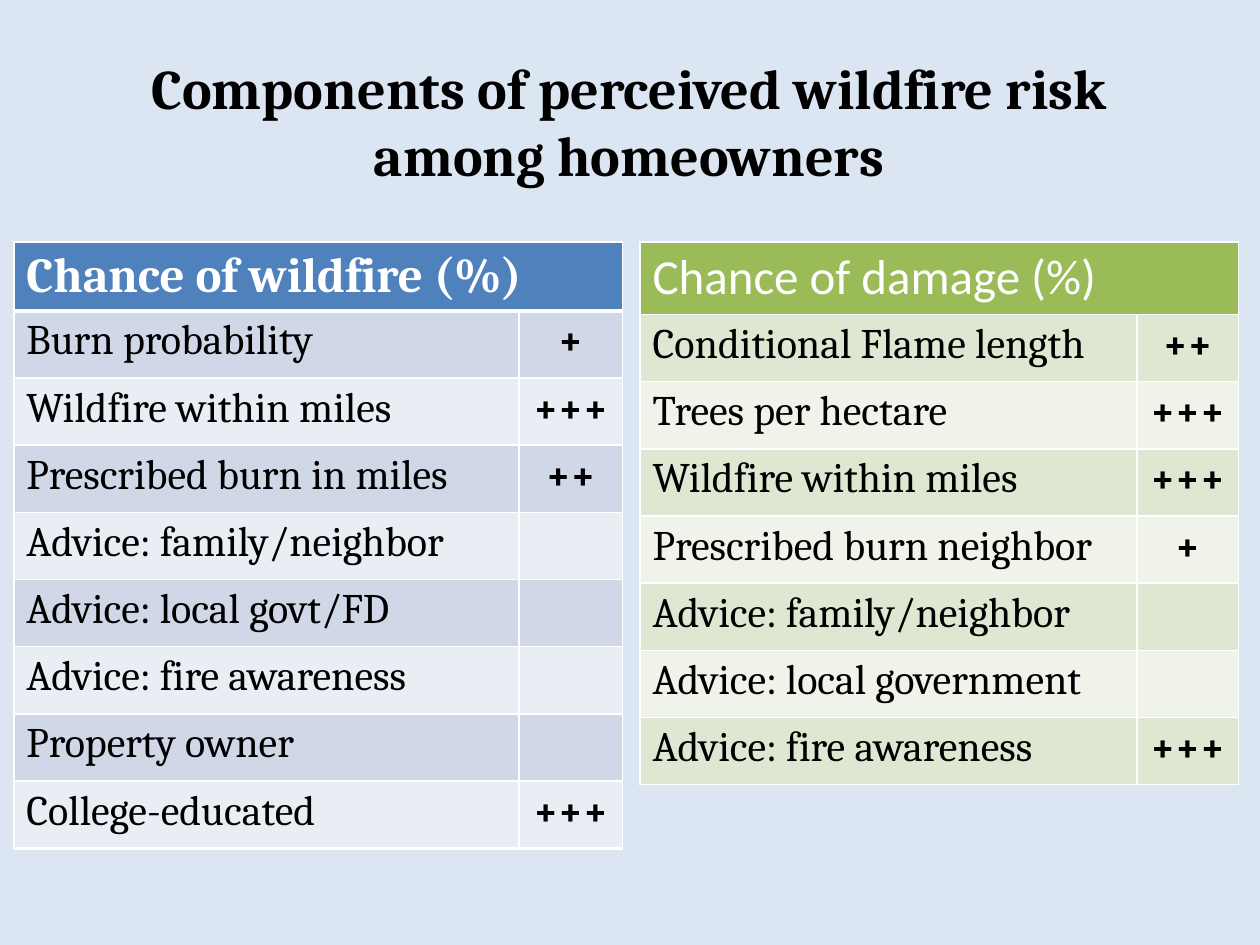
"""Build a slide with two tables on perceived wildfire risk."""
from lxml.etree import SubElement
from pptx import Presentation
from pptx.dml.color import RGBColor
from pptx.enum.text import MSO_ANCHOR as Anchor, PP_ALIGN as Align
from pptx.oxml.ns import qn
from pptx.util import Inches, Pt

BACKGROUND = RGBColor(0xDC, 0xE6, 0xF2)
BLACK = RGBColor(0, 0, 0)
WHITE = RGBColor(0xFF, 0xFF, 0xFF)
BLUE = RGBColor(0x4F, 0x81, 0xBD)
BLUE_BANDS = RGBColor(0xD0, 0xD8, 0xE8), RGBColor(0xE9, 0xED, 0xF4)
GREEN = RGBColor(0x9B, 0xBB, 0x59)
GREEN_BANDS = RGBColor(0xDE, 0xE7, 0xD1), RGBColor(0xEF, 0xF3, 0xEA)

SLIDE_WIDTH, SLIDE_HEIGHT = Inches(10), Inches(7.5)
TABLE_TOP = Inches(1.92)
ROW_HEIGHT = Inches(1.6) // 3
LABEL_SHARE = 0.83

TABLES = [
    dict(left=5.08, width=4.75, title="Chance of damage (%)", font="Calibri", bold=False,
         color=GREEN, bands=GREEN_BANDS, header_rule=1, end_rule=1,
         rows=[("Conditional Flame length", "++"), ("Trees per hectare", "+++"),
               ("Wildfire within miles", "+++"), ("Prescribed burn neighbor", "+"),
               ("Advice: family/neighbor", ""), ("Advice: local government", ""),
               ("Advice: fire awareness", "+++")]),
    dict(left=0.11, width=4.83, title="Chance of wildfire (%)", font="Cambria", bold=True,
         color=BLUE, bands=BLUE_BANDS, header_rule=3, end_rule=2.25,
         rows=[("Burn probability", "+"), ("Wildfire within miles", "+++"),
               ("Prescribed burn in miles", "++"), ("Advice: family/neighbor", ""),
               ("Advice: local govt/FD", ""), ("Advice: fire awareness", ""),
               ("Property owner", ""), ("College-educated", "+++")]),
]


def write(frame, text, size=24, font="Cambria", color=BLACK, bold=False, align=Align.LEFT):
    paragraph = frame.paragraphs[0]
    paragraph.alignment = align
    if text:
        run = paragraph.add_run()
        run.text = text
        run.font.size, run.font.name, run.font.bold = Pt(size), font, bold
        run.font.color.rgb = color


def style_cell(cell, fill, top=1, bottom=1):
    properties = cell._tc.get_or_add_tcPr()
    for side, width in zip("LRTB", (1, 1, top, bottom)):
        line = SubElement(properties, qn(f"a:ln{side}"), w=str(Pt(width)))
        SubElement(SubElement(line, qn("a:solidFill")), qn("a:srgbClr"), val=str(WHITE))
    cell.fill.solid()
    cell.fill.fore_color.rgb = fill


presentation = Presentation()
presentation.slide_width, presentation.slide_height = SLIDE_WIDTH, SLIDE_HEIGHT
slide = presentation.slides.add_slide(presentation.slide_layouts[6])
slide.background.fill.solid()
slide.background.fill.fore_color.rgb = BACKGROUND

for spec_table in TABLES:
    rows, width = spec_table["rows"], Inches(spec_table["width"])
    table = slide.shapes.add_table(len(rows) + 1, 2, Inches(spec_table["left"]), TABLE_TOP,
                                   width, ROW_HEIGHT * (len(rows) + 1)).table
    for column, share in zip(table.columns, (LABEL_SHARE, 1 - LABEL_SHARE)):
        column.width = int(width * share)
    for row in table.rows:
        row.height = ROW_HEIGHT

    header = table.cell(0, 0)
    header.merge(table.cell(0, 1))
    write(header.text_frame, spec_table["title"], size=28, font=spec_table["font"],
          color=WHITE, bold=spec_table["bold"])
    for cell in table.rows[0].cells:
        style_cell(cell, spec_table["color"], bottom=spec_table["header_rule"])

    for number, (label, effect) in enumerate(rows, 1):
        label_cell, effect_cell = table.rows[number].cells
        write(label_cell.text_frame, label)
        write(effect_cell.text_frame, effect, bold=True, align=Align.CENTER)
        for cell in (label_cell, effect_cell):
            style_cell(cell, spec_table["bands"][(number - 1) % 2],
                       top=spec_table["header_rule"] if number == 1 else 1,
                       bottom=spec_table["end_rule"] if number == len(rows) else 1)

title = slide.shapes.add_textbox(Inches(0.58), Inches(0.5), Inches(8.83), Inches(0.92)).text_frame
title.word_wrap = True
title.vertical_anchor = Anchor.MIDDLE
write(title, "Components of perceived wildfire risk among homeowners",
      size=32, bold=True, align=Align.CENTER)

presentation.save("out.pptx")
